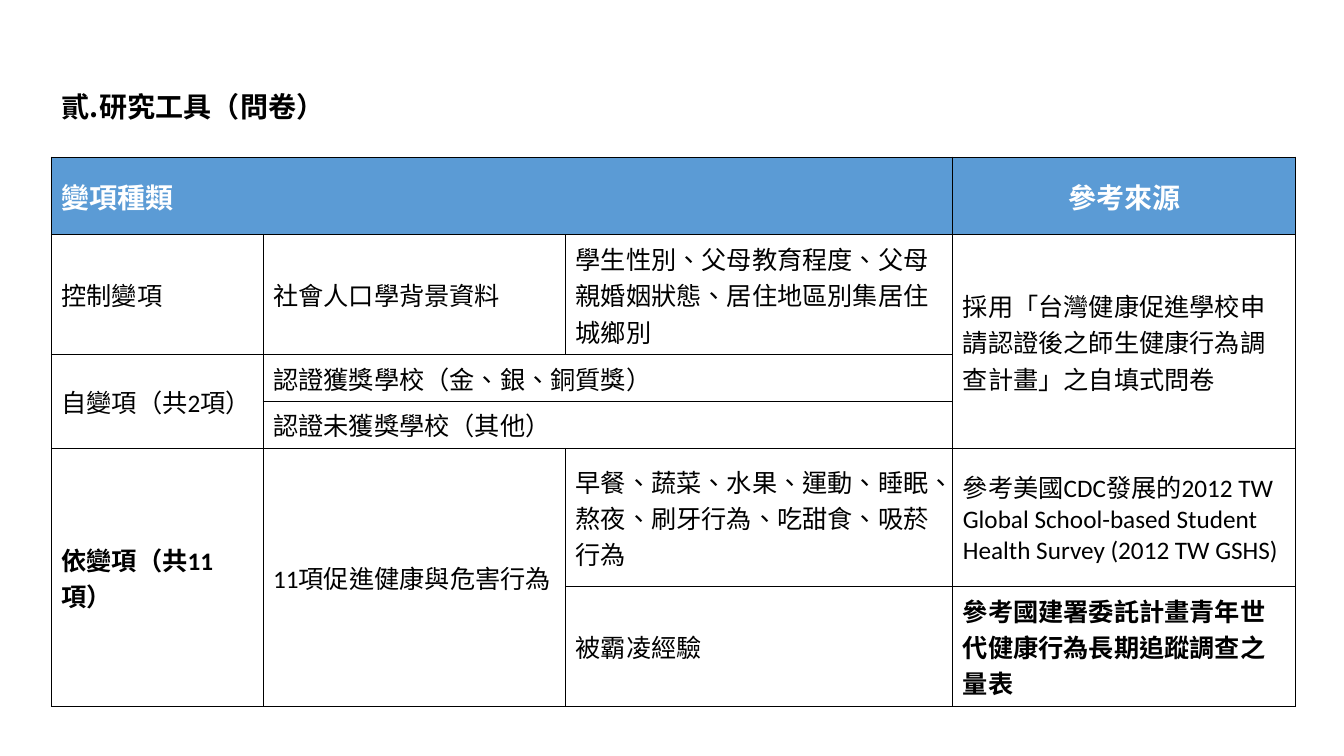
from lxml.etree import SubElement as Sub
from pptx import Presentation
from pptx.dml.color import RGBColor as Rgb
from pptx.enum.lang import MSO_LANGUAGE_ID as Lang
from pptx.enum.text import MSO_ANCHOR as Anchor, MSO_AUTO_SIZE as Fit, PP_ALIGN as Align
from pptx.oxml import parse_xml
from pptx.oxml.ns import nsdecls, qn
from pptx.util import Inches, Pt

WIDE, HIGH = 13.33, 7.5
BLUE, WHITE, BLACK = "5B9BD5", "FFFFFF", "000000"
COLS = [2.1, 3, 3.84, 3.4]
ROWS = [0.77, 1.19, 0.46, 0.47, 1.37, 1.19]
HEAD = {"size": Pt(20), "bold": True}
BODY = {"size": Pt(18), "bold": False}
STRONG = BODY | {"bold": True}
CELLS = [
    (0, 0, 1, 3, "變項種類"),
    (0, 3, 1, 1, "參考來源"),
    (1, 0, 1, 1, "控制變項"),
    (1, 1, 1, 1, "社會人口學背景資料"),
    (1, 2, 1, 1, "學生性別、父母教育程度、父母親婚姻狀態、居住地區別集居住城鄉別"),
    (1, 3, 3, 1, "採用「台灣健康促進學校申請認證後之師生健康行為調查計畫」之自填式問卷"),
    (2, 0, 2, 1, "自變項（共2項）"),
    (2, 1, 1, 2, "認證獲獎學校（金、銀、銅質獎）"),
    (3, 1, 1, 2, "認證未獲獎學校（其他）"),
    (4, 0, 2, 1, "依變項（共11項）"),
    (4, 1, 2, 1, "11項促進健康與危害行為"),
    (4, 2, 1, 1, "早餐、蔬菜、水果、運動、睡眠、熬夜、刷牙行為、吃甜食、吸菸行為"),
    (4, 3, 1, 1, "參考美國CDC發展的2012 TW Global School-based Student Health Survey (2012 TW GSHS)"),
    (5, 2, 1, 1, "被霸凌經驗"),
    (5, 3, 1, 1, "參考國建署委託計畫青年世代健康行為長期追蹤調查之量表"),
]
BOLD = {(4, 0), (5, 3)}


def tint(part, color):
    """Give a fill or font colour from a hex string."""
    part.rgb = Rgb.from_string(color)


def write(para, text, style, color):
    """Add one formatted run to a paragraph."""
    run = para.add_run()
    run.text = text
    look = {"name": "Calibri", "language_id": Lang.TRADITIONAL_CHINESE} | style
    for key, value in look.items():
        setattr(run.font, key, value)
    tint(run.font.color, color)


def title(slide, box):
    """Place the numbered heading in the title placeholder."""
    shape = slide.shapes.title
    for key, value in zip(("left", "top", "width", "height"), box):
        setattr(shape, key, Inches(value))
    frame = shape.text_frame
    frame.auto_size, frame.vertical_anchor = Fit.SHAPE_TO_FIT_TEXT, Anchor.TOP
    para = frame.paragraphs[0]
    para.alignment = Align.LEFT
    props = para._p.get_or_add_pPr()
    dent = Inches(0.38)
    props.set("marL", str(dent))
    props.set("indent", str(-dent))
    Sub(props, qn("a:buAutoNum"), type="ea1ChtPeriod", startAt="2")
    write(para, "研究工具（問卷）", HEAD, BLACK)


def edge(cell):
    """Draw thin black lines on all sides of a cell."""
    props = cell._tc.get_or_add_tcPr()
    for spot, side in enumerate("LRTB"):
        line = parse_xml(
            f'<a:ln{side} {nsdecls("a")} w="{Pt(1)}"><a:solidFill>'
            f'<a:srgbClr val="{BLACK}"/></a:solidFill></a:ln{side}>')
        props.insert(spot, line)


def grid(slide, left, top):
    """Place the table of variables and their sources."""
    size = [Inches(n) for n in (left, top, sum(COLS), sum(ROWS))]
    table = slide.shapes.add_table(len(ROWS), len(COLS), *size).table
    for col, width in zip(table.columns, COLS):
        col.width = Inches(width)
    for num, (row, height) in enumerate(zip(table.rows, ROWS)):
        row.height = Inches(height)
        for cell in row.cells:
            cell.fill.solid()
            tint(cell.fill.fore_color, WHITE if num else BLUE)
            edge(cell)
    for row, col, down, across, text in CELLS:
        cell = table.cell(row, col)
        if down * across > 1:
            cell.merge(table.cell(row + down - 1, col + across - 1))
        cell.vertical_anchor = Anchor.MIDDLE
        para = cell.text_frame.paragraphs[0]
        if (row, col) == (0, 3):
            para.alignment = Align.CENTER
        style = HEAD if row == 0 else STRONG if (row, col) in BOLD else BODY
        write(para, text, style, BLACK if row else WHITE)


def main():
    """Build and save the slide."""
    deck = Presentation()
    deck.slide_width, deck.slide_height = Inches(WIDE), Inches(HIGH)
    slide = deck.slides.add_slide(deck.slide_layouts[5])
    grid(slide, 0.51, 1.56)
    title(slide, (0.51, 0.84, 3.81, 0.44))
    deck.save("out.pptx")


if __name__ == "__main__":
    main()
